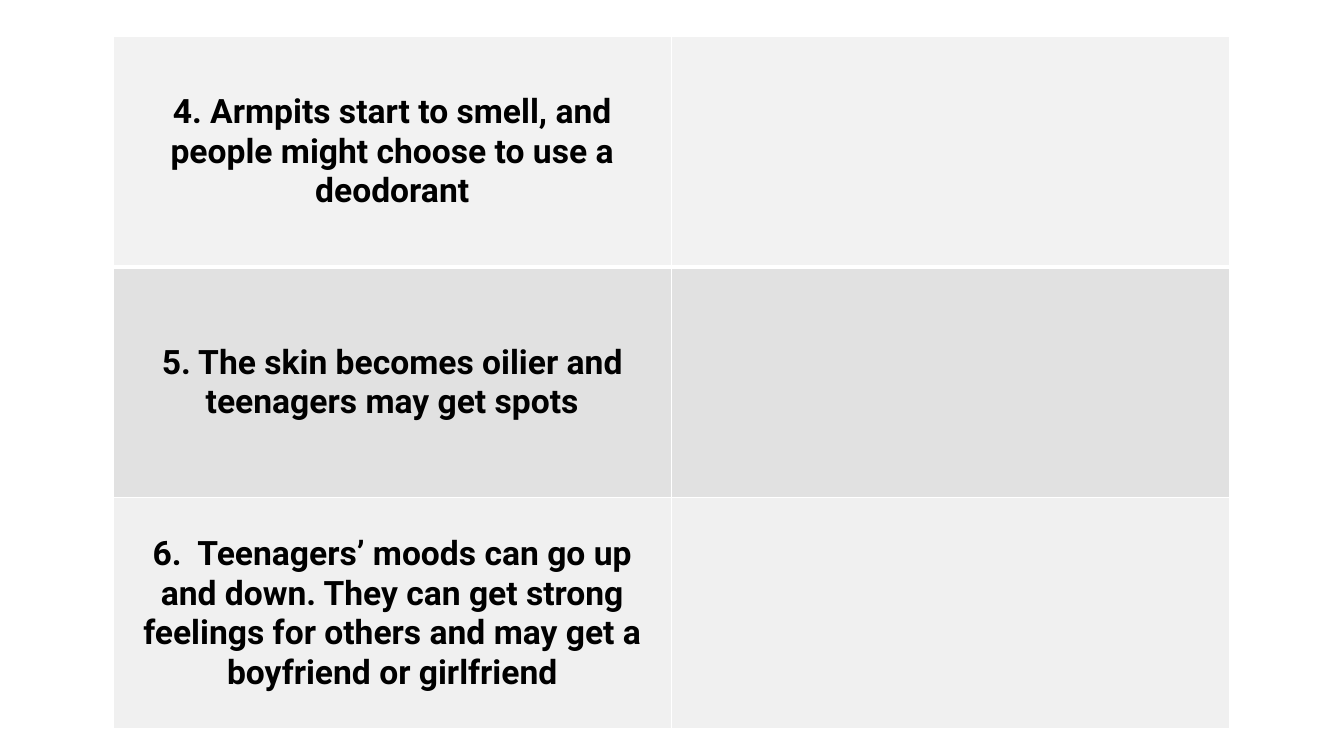
from dataclasses import dataclass

import lxml.etree
import pptx
import pptx.dml.color
import pptx.enum.text
import pptx.oxml.ns
import pptx.table
import pptx.util


@dataclass(frozen=True)
class Theme:
    font: str = "Roboto"
    text_size: int = 24
    text_color: str = "000000"
    border_color: str = "FFFFFF"
    thin_border: int = 1
    thick_border: int = 3


@dataclass(frozen=True)
class ChangeRow:
    text: str
    fill: str
    top_border: int
    bottom_border: int


THEME = Theme()
COLUMN_COUNT = 2
COLUMN_WIDTH = 5.54
ROW_HEIGHT = 2.29
TABLE_LEFT = 1.12
TABLE_TOP = 0.36

CHANGE_ROWS = [
    ChangeRow(
        "4. Armpits start to smell, and people might choose to use a deodorant",
        "F2F2F2", THEME.thin_border, THEME.thick_border,
    ),
    ChangeRow(
        "5. The skin becomes oilier and teenagers may get spots",
        "E1E1E1", THEME.thick_border, THEME.thin_border,
    ),
    ChangeRow(
        "6.  Teenagers’ moods can go up and down. They can get strong feelings "
        "for others and may get a boyfriend or girlfriend",
        "F0F0F0", THEME.thin_border, THEME.thin_border,
    ),
]


def write_text(
    cell: pptx.table._Cell,
    text: str,
    *,
    size: int = THEME.text_size,
    color: str = THEME.text_color,
    bold: bool = True,
) -> None:
    cell.vertical_anchor = pptx.enum.text.MSO_ANCHOR.MIDDLE
    paragraph = cell.text_frame.paragraphs[0]
    paragraph.alignment = pptx.enum.text.PP_ALIGN.CENTER
    run = paragraph.add_run()
    run.text = text
    run.font.name = THEME.font
    run.font.size = pptx.util.Pt(size)
    run.font.bold = bold
    run.font.color.rgb = pptx.dml.color.RGBColor.from_string(color)


def draw_borders(cell: pptx.table._Cell, top: int, bottom: int) -> None:
    qn = pptx.oxml.ns.qn
    properties = cell._tc.get_or_add_tcPr()
    widths = {
        "a:lnL": THEME.thin_border,
        "a:lnR": THEME.thin_border,
        "a:lnT": top,
        "a:lnB": bottom,
    }
    for position, (side, width) in enumerate(widths.items()):
        line = lxml.etree.Element(qn(side), w=str(pptx.util.Pt(width)))
        fill = lxml.etree.SubElement(line, qn("a:solidFill"))
        lxml.etree.SubElement(fill, qn("a:srgbClr"), val=THEME.border_color)
        properties.insert(position, line)


def style_cell(cell: pptx.table._Cell, row: ChangeRow) -> None:
    cell.fill.solid()
    cell.fill.fore_color.rgb = pptx.dml.color.RGBColor.from_string(row.fill)
    draw_borders(cell, row.top_border, row.bottom_border)


def main() -> None:
    presentation = pptx.Presentation()
    presentation.slide_width = pptx.util.Inches(13.33)
    presentation.slide_height = pptx.util.Inches(7.5)
    slide = presentation.slides.add_slide(presentation.slide_layouts[6])

    table = slide.shapes.add_table(
        len(CHANGE_ROWS),
        COLUMN_COUNT,
        pptx.util.Inches(TABLE_LEFT),
        pptx.util.Inches(TABLE_TOP),
        pptx.util.Inches(COLUMN_WIDTH * COLUMN_COUNT),
        pptx.util.Inches(ROW_HEIGHT * len(CHANGE_ROWS)),
    ).table
    table.first_row = False
    table.horz_banding = False

    for row_index, row in enumerate(CHANGE_ROWS):
        for column_index in range(COLUMN_COUNT):
            style_cell(table.cell(row_index, column_index), row)
        write_text(table.cell(row_index, 0), row.text)

    presentation.save("out.pptx")


if __name__ == "__main__":
    main()
